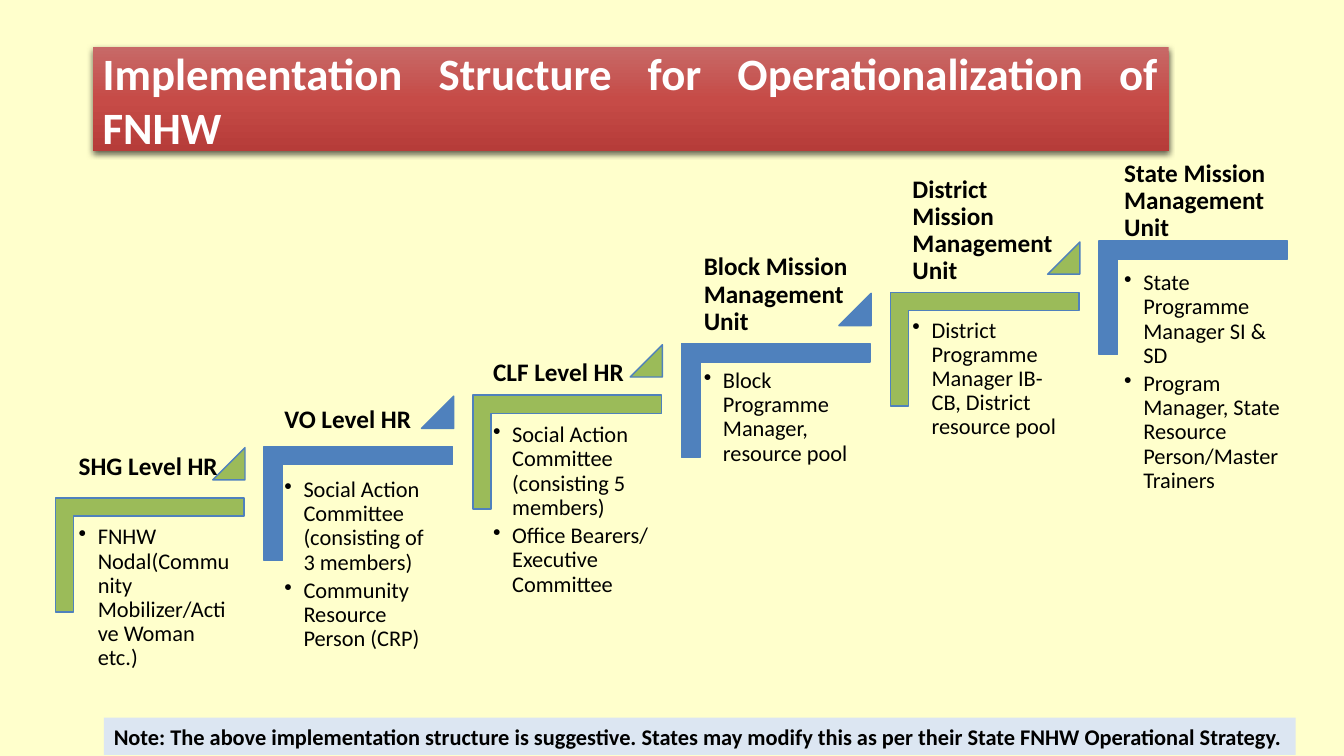
"""Build the staircase slide of the FNHW implementation structure."""
from copy import deepcopy

from lxml.etree import SubElement
from pptx import Presentation
from pptx.dml.color import RGBColor
from pptx.enum.shapes import MSO_SHAPE
from pptx.enum.text import MSO_ANCHOR, MSO_AUTO_SIZE, PP_ALIGN
from pptx.oxml.ns import qn
from pptx.util import Emu, Pt

COLORS = {
    "background": "FFFFCC", "green": "9BBB59", "blue": "4F81BD",
    "black": "000000", "white": "FFFFFF", "note": "DCE6F2",
}
TITLE_GRADIENT = [(0, "C76967"), (0.5, "C64B47"), (1, "B63C39")]
TITLE = "Implementation Structure for Operationalization of FNHW"
NOTE = ("Note: The above implementation structure is suggestive. "
        "States may modify this as per their State FNHW Operational Strategy.")
STEP_WIDTH, STEP_HEIGHT = 207, 51
STEPS = [
    ("SHG Level HR", 71, 443, 32,
     ["FNHW Nodal(Community Mobilizer/Active Woman etc.)"]),
    ("VO Level HR", 275, 396, 32,
     ["Social Action Committee (consisting of  3 members)",
      "Community Resource Person (CRP)"]),
    ("CLF Level HR", 482, 350, 26,
     ["Social Action Committee (consisting 5 members)",
      "Office Bearers/ Executive Committee"]),
    ("Block Mission Management Unit", 691, 245, 24,
     ["Block Programme Manager, resource pool"]),
    ("District Mission Management Unit", 898, 168, 24,
     ["District Programme Manager IB-CB, District resource pool"]),
    ("State Mission Management Unit", 1108, 152, 21,
     ["State Programme Manager SI & SD",
      "Program Manager, State Resource Person/Master Trainers"]),
]


def px(value):
    return Emu(value * 9144)


def rgb(name):
    return RGBColor.from_string(COLORS[name])


def set_attributes(target, values):
    for name, value in values.items():
        setattr(target, name, value)


class SlideBuilder:
    """Hold the text style and the current slide."""

    def __init__(self, slide, font_name="Calibri"):
        self.slide = slide
        self.font_name = font_name
        slide.background.fill.solid()
        slide.background.fill.fore_color.rgb = rgb("background")

    def shape(self, kind, box, fill=None, line=None, adjustments=()):
        shape = self.slide.shapes.add_shape(kind, *map(px, box))
        shape.shadow.inherit = False
        if fill:
            shape.fill.solid()
            shape.fill.fore_color.rgb = rgb(fill)
        if line:
            shape.line.color.rgb = rgb(line)
            shape.line.width = Pt(1)
        else:
            shape.line.fill.background()
        for index, value in enumerate(adjustments):
            shape.adjustments[index] = value
        return shape

    def text(self, paragraph, text, size, color="black", bold=True, **layout):
        set_attributes(paragraph, layout)
        run = paragraph.add_run()
        run.text = text
        set_attributes(run.font, {"name": self.font_name, "size": Pt(size), "bold": bold})
        run.font.color.rgb = rgb(color)

    def bullet(self, paragraph, text):
        self.text(paragraph, text, 16, bold=False, level=1,
                  line_spacing=0.9, space_after=Pt(3))
        properties = paragraph._p.get_or_add_pPr()
        properties.set("marL", str(px(19)))
        properties.set("indent", str(-px(19)))
        SubElement(properties, qn("a:buChar"), char="•")

    def title(self, text, box):
        shape = self.shape(MSO_SHAPE.RECTANGLE, box)
        shape.fill.gradient()
        shape.fill.gradient_angle = 270
        properties = shape._element.spPr
        stops = properties.find(qn("a:gradFill")).find(qn("a:gsLst"))
        stops.insert(1, deepcopy(stops[0]))
        for stop, (position, color) in zip(shape.fill.gradient_stops, TITLE_GRADIENT):
            stop.position = position
            stop.color.rgb = RGBColor.from_string(color)
        shadow = SubElement(properties.find(qn("a:effectLst")), qn("a:outerShdw"),
                            blurRad=str(Pt(4.5)), dist=str(Pt(1.5)),
                            dir="5400000", rotWithShape="0")
        shade = SubElement(shadow, qn("a:srgbClr"), val=COLORS["black"])
        SubElement(shade, qn("a:alpha"), val="63000")
        set_attributes(shape.text_frame, {"word_wrap": True, "vertical_anchor": MSO_ANCHOR.MIDDLE})
        self.text(shape.text_frame.paragraphs[0], text, 32, "white",
                  alignment=PP_ALIGN.JUSTIFY)

    def note(self, text, box):
        frame = self.shape(MSO_SHAPE.RECTANGLE, box, "note").text_frame
        set_attributes(frame, {"word_wrap": True, "vertical_anchor": MSO_ANCHOR.TOP,
                               "auto_size": MSO_AUTO_SIZE.SHAPE_TO_FIT_TEXT})
        self.text(frame.paragraphs[0], text, 16, alignment=PP_ALIGN.LEFT)

    def corner(self, left, top, color):
        shape = self.shape(MSO_SHAPE.CORNER, (left, top, 113, 187),
                           color, "blue", (0.16, 0.16))
        shape.rotation = 90

    def triangle(self, left, top, color):
        self.shape(MSO_SHAPE.ISOSCELES_TRIANGLE, (left, top, 32, 32), color, "blue", (1,))

    def level_text(self, heading, left, top, gap, duties):
        frame = self.slide.shapes.add_textbox(*map(px, (left, top, 169, 148))).text_frame
        set_attributes(frame, {"word_wrap": True, "vertical_anchor": MSO_ANCHOR.TOP,
                               "margin_left": px(7), "margin_right": px(7),
                               "margin_top": px(7), "margin_bottom": px(7)})
        self.text(frame.paragraphs[0], heading, 18, line_spacing=0.9, space_after=Pt(gap))
        for duty in duties:
            self.bullet(frame.add_paragraph(), duty)


def main():
    presentation = Presentation()
    set_attributes(presentation, {"slide_width": px(1333), "slide_height": px(750)})
    builder = SlideBuilder(presentation.slides.add_slide(presentation.slide_layouts[6]))
    builder.title(TITLE, (92, 47, 1067, 103))
    for index, step in enumerate(STEPS):
        color = "blue" if index % 2 else "green"
        across, rise = index * STEP_WIDTH, index * STEP_HEIGHT
        builder.corner(92 + across, 457 - rise, color)
        builder.level_text(*step)
        if index < len(STEPS) - 1:
            builder.triangle(211 + across, 444 - rise, color)
    builder.note(NOTE, (103, 712, 1182, 37))
    presentation.save("out.pptx")


if __name__ == "__main__":
    main()
